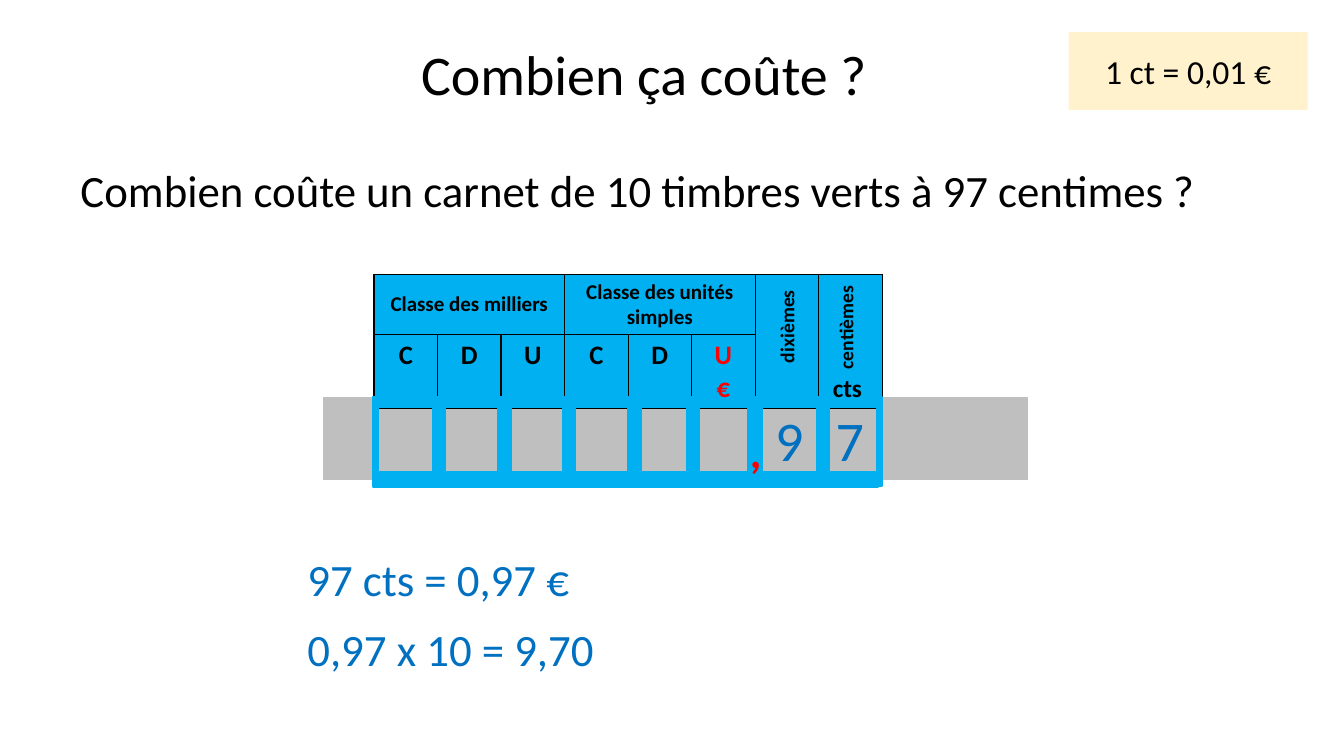
"""Build the slide that works out the price of ten stamps with a place-value table."""
from lxml import etree
from pptx import Presentation
from pptx.dml.color import RGBColor
from pptx.enum.shapes import MSO_SHAPE
from pptx.enum.text import MSO_ANCHOR, MSO_AUTO_SIZE, PP_ALIGN
from pptx.oxml.ns import qn
from pptx.util import Pt

PX = 9144
RECTANGLE = MSO_SHAPE.RECTANGLE
LEFT, CENTER = PP_ALIGN.LEFT, PP_ALIGN.CENTER
TOP, MIDDLE = MSO_ANCHOR.TOP, MSO_ANCHOR.MIDDLE
NO_AUTOFIT = MSO_AUTO_SIZE.NONE
FONT = "Calibri"
BLACK, WHITE, RED = "000000", "FFFFFF", "FF0000"
SKY, INK, GREY, CREAM = "00B0F0", "0070C0", "BFBFBF", "FFF2CC"
hex_color = RGBColor.from_string


def write(text_frame, text, size, color=BLACK, bold=False, align=CENTER, anchor=TOP):
    """Set the text and format every run."""
    text_frame.text = text
    text_frame.word_wrap = True
    text_frame.vertical_anchor = anchor
    for paragraph in text_frame.paragraphs:
        paragraph.alignment = align
        for run in paragraph.runs:
            run.font.name = FONT
            run.font.size = Pt(size)
            run.font.bold = bold
            run.font.color.rgb = hex_color(color)


def add_rectangle(box, fill, line=None):
    """Add a plain rectangle without shadow."""
    shape = slide.shapes.add_shape(RECTANGLE, *[value * PX for value in box])
    shape.shadow.inherit = False
    shape.fill.solid()
    shape.fill.fore_color.rgb = hex_color(fill)
    if line:
        shape.line.color.rgb = hex_color(line)
        shape.line.width = Pt(1)
    else:
        shape.line.fill.background()
    return shape


presentation = Presentation()
presentation.slide_width = 1333 * PX
presentation.slide_height = 750 * PX
slide = presentation.slides.add_slide(presentation.slide_layouts[5])

title = slide.shapes.title
title.left, title.top, title.width, title.height = [value * PX for value in (200, 33, 877, 88)]
write(title.text_frame, "Combien ça coûte ?", 40, anchor=MIDDLE)
title.text_frame.auto_size = NO_AUTOFIT
title.text_frame.paragraphs[0].line_spacing = 0.9

question = add_rectangle((70, 157, 1193, 64), WHITE)
write(question.text_frame, "Combien coûte un carnet de 10 timbres verts à 97 centimes ?", 32, align=LEFT)

answer = slide.shapes.add_textbox(295 * PX, 542 * PX, 371 * PX, 135 * PX)
write(answer.text_frame, "97 cts = 0,97 €\n0,97 x 10 = 9,70", 32, INK, align=LEFT)
for paragraph in answer.text_frame.paragraphs:
    paragraph.space_after = Pt(12)

reminder = add_rectangle((1060, 32, 237, 77), CREAM)
write(reminder.text_frame, "1 ct = 0,01 €", 24, anchor=MIDDLE)

strip = add_rectangle((321, 395, 698, 81), GREY, GREY)
write(strip.text_frame, "\t9\t7", 40, INK, align=LEFT, anchor=MIDDLE)
properties = strip.text_frame.paragraphs[0]._p.get_or_add_pPr()
tab_list = etree.SubElement(properties, qn("a:tabLst"))
for position in (438, 498):
    etree.SubElement(tab_list, qn("a:tab"), pos=str(position * PX), algn="l")

table = slide.shapes.add_table(2, 8, 371 * PX, 272 * PX, 504 * PX, 133 * PX).table
table.first_row = False
table.horz_banding = False
for column in table.columns:
    column.width = 63 * PX
for row, height in zip(table.rows, (60, 73)):
    row.height = height * PX
for cell in table.iter_cells():
    cell.fill.solid()
    cell.fill.fore_color.rgb = hex_color(SKY)
    cell_properties = cell._tc.get_or_add_tcPr()
    for index, side in enumerate(("a:lnL", "a:lnR", "a:lnT", "a:lnB")):
        border = etree.Element(qn(side), w=str(Pt(1)))
        border_fill = etree.SubElement(border, qn("a:solidFill"))
        etree.SubElement(border_fill, qn("a:srgbClr"), val=BLACK)
        cell_properties.insert(index, border)

for column, heading, anchor in ((0, "Classe des milliers", MIDDLE), (3, "Classe des unités simples", TOP)):
    cell = table.cell(0, column)
    cell.merge(table.cell(0, column + 2))
    write(cell.text_frame, heading, 15, bold=True)
    cell.vertical_anchor = anchor
for column in (6, 7):
    table.cell(0, column).merge(table.cell(1, column))
for column, letter in enumerate(("C", "D", "U", "C", "D", "U\n€")):
    color = RED if column == 5 else BLACK
    write(table.cell(1, column).text_frame, letter, 19, color, bold=True)

for label, left, top, width in (("dixièmes", 728, 307, 105), ("centièmes", 781, 308, 116)):
    heading = slide.shapes.add_textbox(left * PX, top * PX, width * PX, 34 * PX)
    heading.rotation = 270
    write(heading.text_frame, label, 14, bold=True)

bars = [(left, 394, 13, 88) for left in (429, 494, 558, 623, 681)]
bars += [(left, 394, 5, 88) for left in (370, 870)]
bars += [(742, 394, 14, 88), (810, 394, 13, 81), (370, 468, 501, 15)]
for bar in bars:
    add_rectangle(bar, SKY, SKY)

cents = slide.shapes.add_textbox(816 * PX, 364 * PX, 49 * PX, 40 * PX)
write(cents.text_frame, "cts", 18, bold=True)
cents.text_frame.word_wrap = False

comma = slide.shapes.add_textbox(741 * PX, 415 * PX, 17 * PX, 70 * PX)
write(comma.text_frame, ",", 32, RED, bold=True)
comma.text_frame.margin_left = comma.text_frame.margin_right = 0

presentation.save("out.pptx")
